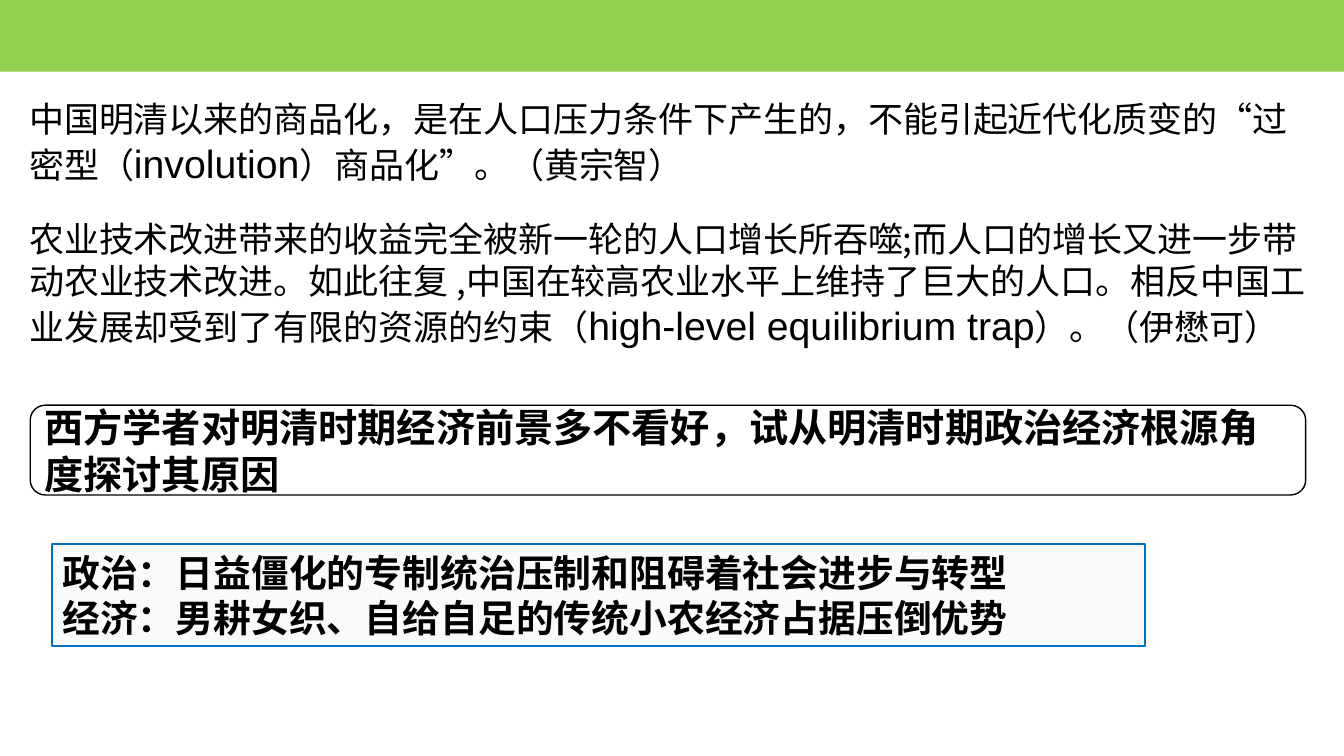
"""Build a slide on Western views of the Ming and Qing economy."""
from dataclasses import dataclass
from typing import Optional

from lxml import etree
from pptx import Presentation
from pptx import util as u
from pptx.dml.color import RGBColor
from pptx.enum import shapes, text
from pptx.oxml import ns

GREEN = RGBColor(0x92, 0xD0, 0x50)
BLACK = RGBColor(0x00, 0x00, 0x00)
BLUE = RGBColor(0x00, 0x70, 0xC0)
PALE = RGBColor(0xFA, 0xFA, 0xFA)
CHINESE = "Noto Sans CJK SC"
ENGLISH = "Arial"


@dataclass(frozen=True)
class Phrase:
    wording: str
    size: float
    face: str = CHINESE
    bold: bool = False


@dataclass(frozen=True)
class Panel:
    left: float
    top: float
    width: float
    height: float
    paragraphs: tuple[tuple[Phrase, ...], ...] = ()
    outline_shape: Optional[shapes.MSO_SHAPE] = None
    fill: Optional[RGBColor] = None
    border: Optional[RGBColor] = None
    border_width: float = 1
    anchor: text.MSO_ANCHOR = text.MSO_ANCHOR.TOP


def quotation(before: str, term: str, after: str) -> tuple[tuple[Phrase, ...], ...]:
    return ((Phrase(before, 25), Phrase(term, 28, ENGLISH), Phrase(after, 25)),)


PANELS = (
    Panel(0, 0, 13.33, 0.71, outline_shape=shapes.MSO_SHAPE.RECTANGLE, fill=GREEN),
    Panel(0.19, 0.92, 13.02, 0.99, quotation(
        "中国明清以来的商品化，是在人口压力条件下产生的，不能引起近代化质变的“过密型（",
        "involution", "）商品化”。（黄宗智）")),
    Panel(0.19, 2.11, 13.02, 1.41, quotation(
        "农业技术改进带来的收益完全被新一轮的人口增长所吞噬;而人口的增长又进一步带动农业技术改进。"
        "如此往复 ,中国在较高农业水平上维持了巨大的人口。相反中国工业发展却受到了有限的资源的约束（",
        "high-level equilibrium trap", "）。（伊懋可）")),
    Panel(0.3, 4.02, 12.65, 0.89,
          ((Phrase("西方学者对明清时期经济前景多不看好，试从明清时期政治经济根源角度探讨其原因",
                   28, bold=True),),),
          shapes.MSO_SHAPE.ROUNDED_RECTANGLE, border=BLACK, anchor=text.MSO_ANCHOR.MIDDLE),
    Panel(0.52, 5.4, 10.84, 1.01,
          ((Phrase("政治：日益僵化的专制统治压制和阻碍着社会进步与转型", 27, bold=True),),
           (Phrase("经济：男耕女织、自给自足的传统小农经济占据压倒优势", 27, bold=True),)),
          shapes.MSO_SHAPE.RECTANGLE, PALE, BLUE, 1.5),
)


def write_phrase(paragraph, phrase: Phrase) -> None:
    run = paragraph.add_run()
    run.text = phrase.wording
    run.font.size = u.Pt(phrase.size)
    run.font.name = phrase.face
    run.font.bold = phrase.bold
    run.font.color.rgb = BLACK
    east_asian = etree.SubElement(run.font._element, ns.qn("a:ea"))
    east_asian.set("typeface", phrase.face)


def draw_panel(slide, panel: Panel) -> None:
    bounds = [u.Inches(n) for n in (panel.left, panel.top, panel.width, panel.height)]
    if panel.outline_shape is None:
        box = slide.shapes.add_textbox(*bounds)
    else:
        box = slide.shapes.add_shape(panel.outline_shape, *bounds)
        box.shadow.inherit = False
    if panel.fill is None:
        box.fill.background()
    else:
        box.fill.solid()
        box.fill.fore_color.rgb = panel.fill
    if panel.border is None:
        box.line.fill.background()
    else:
        box.line.color.rgb = panel.border
        box.line.width = u.Pt(panel.border_width)
    frame = box.text_frame
    frame.word_wrap = True
    frame.vertical_anchor = panel.anchor
    for index, phrases in enumerate(panel.paragraphs):
        paragraph = frame.add_paragraph() if index else frame.paragraphs[0]
        paragraph.alignment = text.PP_ALIGN.LEFT
        for phrase in phrases:
            write_phrase(paragraph, phrase)


def main() -> None:
    deck = Presentation()
    deck.slide_width, deck.slide_height = u.Inches(13.33), u.Inches(7.5)
    slide = deck.slides.add_slide(deck.slide_layouts[6])
    for panel in PANELS:
        draw_panel(slide, panel)
    deck.save("out.pptx")


if __name__ == "__main__":
    main()
